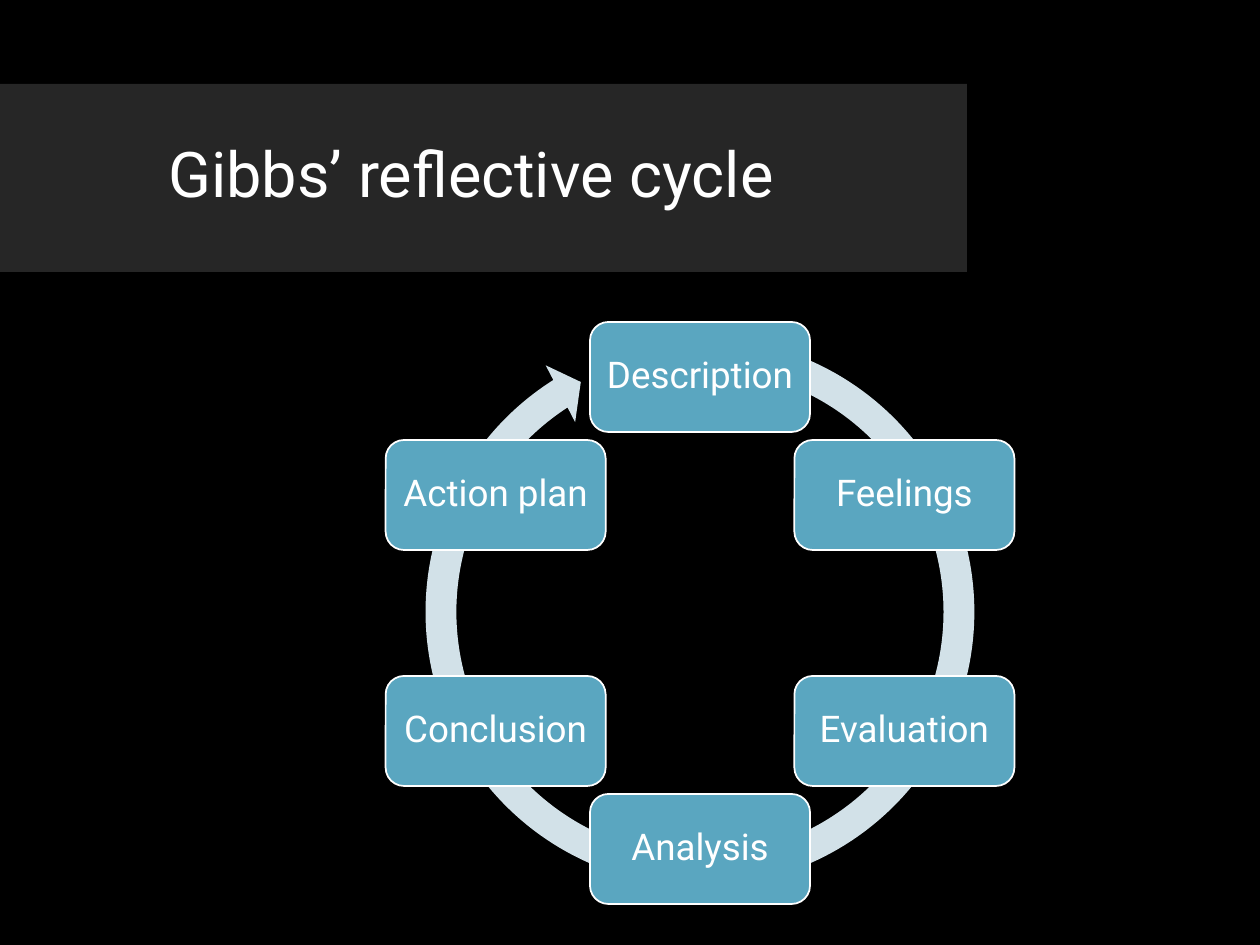
from dataclasses import dataclass
from math import cos, pi, sin

from pptx import Presentation
from pptx.dml.color import RGBColor
from pptx.enum.shapes import MSO_SHAPE
from pptx.enum.text import MSO_ANCHOR, PP_ALIGN
from pptx.util import Emu, Pt

RECT = MSO_SHAPE.RECTANGLE
ROUND = MSO_SHAPE.ROUNDED_RECTANGLE
ARROW = MSO_SHAPE.CIRCULAR_ARROW
MIDDLE = MSO_ANCHOR.MIDDLE
LEFT, CENTER = PP_ALIGN.LEFT, PP_ALIGN.CENTER


@dataclass(frozen=True)
class Theme:
    """Colours, font and type sizes of the slide."""
    back: str = "000000"
    band: str = "262626"
    ring: str = "D2E1E8"
    step: str = "5AA6C0"
    text: str = "FFFFFF"
    font: str = "Roboto"
    title: int = 36
    label: int = 21


THEME = Theme()
STEPS = ("Description", "Feelings", "Evaluation",
         "Analysis", "Conclusion", "Action plan")


def px(num):
    """Turn pixels into EMU."""
    return Emu(round(num * 914400 / 126))


def color(code):
    """Turn a hex code into a colour."""
    return RGBColor.from_string(code)


def add_form(slide, kind, box, fill):
    """Add a plain filled shape without line or shadow."""
    form = slide.shapes.add_shape(kind, *map(px, box))
    form.shadow.inherit = False
    form.fill.solid()
    form.fill.fore_color.rgb = color(fill)
    form.line.fill.background()
    return form


def set_text(frame, text, size, align):
    """Write one paragraph, centred on the height of its frame."""
    frame.word_wrap = True
    frame.vertical_anchor = MIDDLE
    para = frame.paragraphs[0]
    para.text = text
    para.alignment = align
    para.line_spacing = 0.9
    para.font.name = THEME.font
    para.font.size = Pt(size)
    para.font.color.rgb = color(THEME.text)


def add_title(slide, box, text):
    """Draw the title band and its text inside the box."""
    left, top, width, height = box
    add_form(slide, RECT, box, THEME.band)
    inner = (left + 156, top + 19, width - 167, height - 39)
    label = slide.shapes.add_textbox(*map(px, inner))
    set_text(label.text_frame, text, THEME.title, LEFT)


def add_step(slide, box, text):
    """Draw one step of the cycle."""
    card = add_form(slide, ROUND, box, THEME.step)
    card.line.color.rgb = color(THEME.text)
    card.line.width = Pt(1)
    frame = card.text_frame
    frame.margin_left = frame.margin_right = px(6)
    set_text(frame, text, THEME.label, CENTER)


def add_cycle(slide, box, steps):
    """Draw the ring arrow and spread the steps clockwise from the top."""
    left, top, side, _ = box
    ring = add_form(slide, ARROW, box, THEME.ring)
    for spot, value in enumerate((0.053, 3.126, 142.443, 171.176, 0.055)):
        ring.adjustments[spot] = value
    wide, high, radius = 220, 110, 236
    mid_x, mid_y = left + side / 2, top + side / 2 + 1
    for spot, text in enumerate(steps):
        turn = 2 * pi * spot / len(steps)
        x = mid_x + radius * sin(turn) - wide / 2
        y = mid_y - radius * cos(turn) - high / 2
        add_step(slide, (x, y, wide, high), text)


def main():
    """Build and save the slide."""
    deck = Presentation()
    deck.slide_width, deck.slide_height = px(1260), px(945)
    slide = deck.slides.add_slide(deck.slide_layouts[6])
    slide.background.fill.solid()
    slide.background.fill.fore_color.rgb = color(THEME.back)
    add_title(slide, (0, 84, 967, 188), "Gibbs’ reflective cycle")
    add_cycle(slide, (409, 321, 582, 582), STEPS)
    deck.save("out.pptx")


if __name__ == "__main__":
    main()
